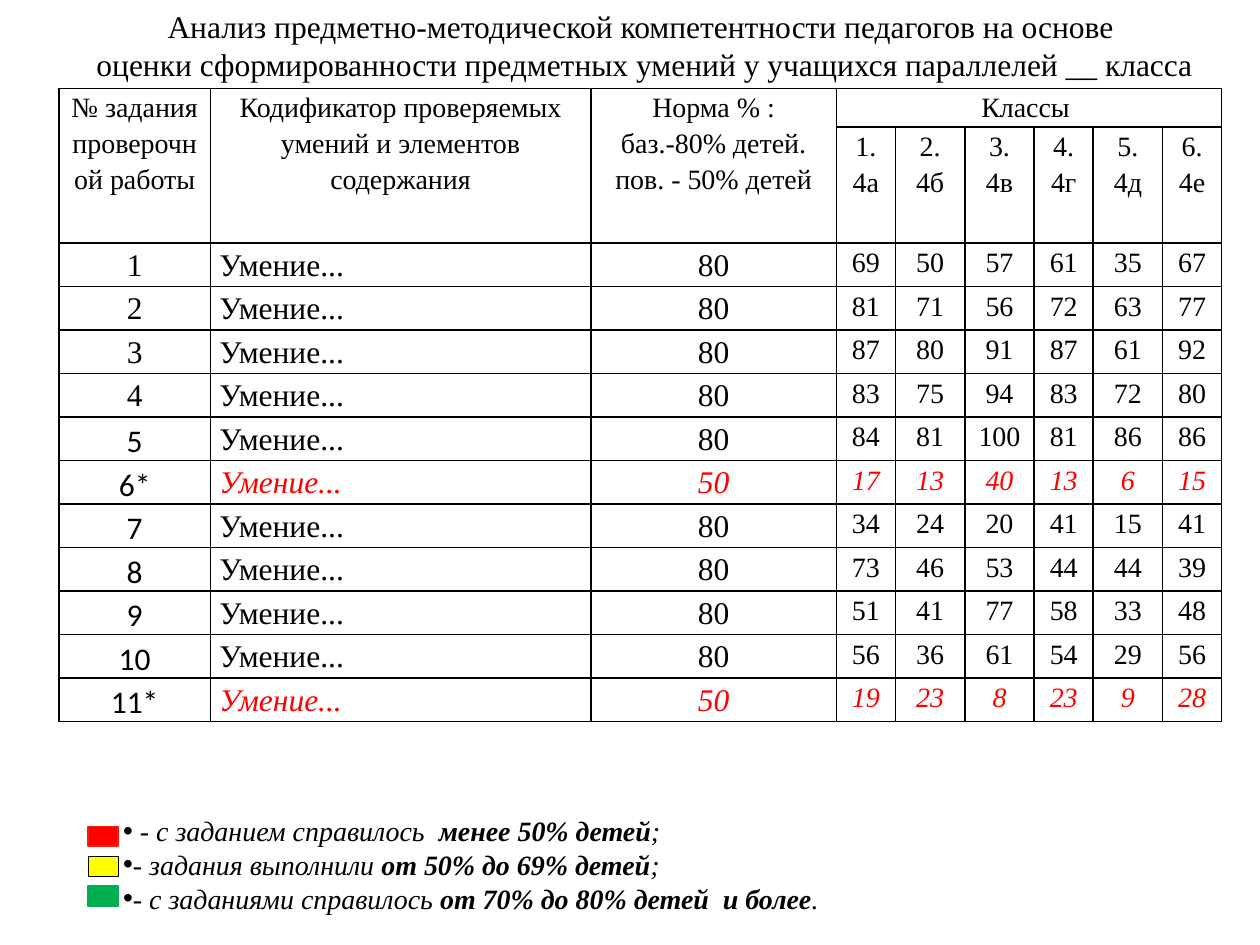
from lxml import etree
from pptx import Presentation
from pptx.dml.color import RGBColor
from pptx.enum.shapes import MSO_SHAPE
from pptx.enum.text import MSO_ANCHOR, MSO_AUTO_SIZE, PP_ALIGN
from pptx.oxml.ns import qn
from pptx.util import Cm, Pt

CENTER, LEFT = PP_ALIGN.CENTER, PP_ALIGN.LEFT
TOP, MIDDLE = MSO_ANCHOR.TOP, MSO_ANCHOR.MIDDLE
FIT = MSO_AUTO_SIZE.SHAPE_TO_FIT_TEXT
RECT = MSO_SHAPE.RECTANGLE
SERIF, SANS = "Times New Roman", "Calibri"
COLORS = {"black": "000000", "red": "FF0000", "red_line": "FD1E07",
          "yellow": "FFFF00", "green": "00B050"}


def add_run(p, text, size, font=SERIF, color="black", bold=False, italic=False):
    r = p.add_run()
    r.text = text
    r.font.size, r.font.name = Pt(size), font
    r.font.bold, r.font.italic = bold, italic
    r.font.color.rgb = RGBColor.from_string(COLORS[color])


def fill_cell(cell, lines, size, align=CENTER, **style):
    tf = cell.text_frame
    for i, line in enumerate(lines):
        p = tf.add_paragraph() if i else tf.paragraphs[0]
        p.alignment, p.line_spacing = align, 1.15
        add_run(p, line, size, **style)


prs = Presentation()
prs.slide_width, prs.slide_height = Cm(25.4), Cm(19.05)
slide = prs.slides.add_slide(prs.slide_layouts[1])

# Title
sp = slide.shapes.title
sp.left, sp.top, sp.width, sp.height = Cm(1.19), Cm(0), Cm(23.62), Cm(1.8)
tf = sp.text_frame
tf.word_wrap, tf.auto_size, tf.vertical_anchor = False, FIT, MIDDLE
title = ["Анализ предметно-методической компетентности педагогов на основе ",
         "оценки сформированности предметных умений у учащихся параллелей __ класса"]
for i, line in enumerate(title):
    p = tf.add_paragraph() if i else tf.paragraphs[0]
    p.alignment = CENTER
    add_run(p, line, 18)

# Table grid
col_widths = [3.05, 7.67, 4.95, 1.19, 1.4, 1.4, 1.19, 1.4, 1.19]
row_heights = [0.78, 2.34] + [0.877] * 11
table = slide.shapes.add_table(
    len(row_heights), len(col_widths), Cm(1.19), Cm(1.78),
    Cm(sum(col_widths)), Cm(sum(row_heights))).table
table.first_row = table.horz_banding = False
for col, width in zip(table.columns, col_widths):
    col.width = Cm(width)
for row, height in zip(table.rows, row_heights):
    row.height = Cm(height)

# Cell margins, borders and fill
for cell in table.iter_cells():
    cell.margin_left = cell.margin_right = Cm(0.18)
    cell.margin_top = cell.margin_bottom = 0
    cell.vertical_anchor = TOP
    tcPr = cell._tc.get_or_add_tcPr()
    for side in ("a:lnL", "a:lnR", "a:lnT", "a:lnB"):
        ln = etree.SubElement(tcPr, qn(side), w=str(Pt(1)))
        solid = etree.SubElement(ln, qn("a:solidFill"))
        etree.SubElement(solid, qn("a:srgbClr"), val=COLORS["black"])
    cell.fill.background()

# Table header
headers = [["№ задания проверочной работы"],
           ["Кодификатор проверяемых умений и элементов содержания"],
           ["Норма % :", "баз.-80% детей.", "пов. - 50% детей"]]
for c, lines in enumerate(headers):
    table.cell(0, c).merge(table.cell(1, c))
    fill_cell(table.cell(0, c), lines, 16)
table.cell(0, 3).merge(table.cell(0, 8))
fill_cell(table.cell(0, 3), ["Классы "], 16)
for i, letter in enumerate("абвгде"):
    fill_cell(table.cell(1, 3 + i), [f"{i + 1}.", f"4{letter}"], 16)

# Results by task; advanced tasks carry an asterisk
results = [
    ("1", [69, 50, 57, 61, 35, 67]),
    ("2", [81, 71, 56, 72, 63, 77]),
    ("3", [87, 80, 91, 87, 61, 92]),
    ("4", [83, 75, 94, 83, 72, 80]),
    ("5", [84, 81, 100, 81, 86, 86]),
    ("6*", [17, 13, 40, 13, 6, 15]),
    ("7", [34, 24, 20, 41, 15, 41]),
    ("8", [73, 46, 53, 44, 44, 39]),
    ("9", [51, 41, 77, 58, 33, 48]),
    ("10", [56, 36, 61, 54, 29, 56]),
    ("11*", [19, 23, 8, 23, 9, 28]),
]
for i, (task, scores) in enumerate(results):
    row = 2 + i
    advanced = task.endswith("*")
    style = {"color": "red" if advanced else "black", "italic": advanced}
    fill_cell(table.cell(row, 0), [task], 18, font=SERIF if i < 4 else SANS)
    fill_cell(table.cell(row, 1), ["Умение..."], 18, LEFT, **style)
    fill_cell(table.cell(row, 2), ["50" if advanced else "80"], 18, **style)
    for c, score in enumerate(scores, 3):
        fill_cell(table.cell(row, c), [str(score)], 16, **style)

# Legend text
sp = slide.placeholders[1]
sp.left, sp.top, sp.width, sp.height = Cm(0.99), Cm(16.28), Cm(24.41), Cm(2.31)
tf = sp.text_frame
tf.word_wrap, tf.auto_size, tf.vertical_anchor = True, FIT, TOP
legend = [(" - с заданием справилось  ", "менее 50% детей", ";"),
          ("- задания выполнили ", "от 50% до 69% детей", ";"),
          ("- с заданиями справилось ", "от 70% до 80% детей  и более", ".")]
for i, parts in enumerate(legend):
    p = tf.add_paragraph() if i else tf.paragraphs[0]
    p.alignment = LEFT
    p.space_before = p.space_after = Pt(0)
    pPr = p._p.get_or_add_pPr()
    pPr.set("marL", "0")
    pPr.set("indent", str(Cm(1.24)))
    etree.SubElement(pPr, qn("a:buFont"), typeface="Arial")
    etree.SubElement(pPr, qn("a:buChar"), char="•")
    for text, bold in zip(parts, (False, True, False)):
        add_run(p, text, 16, bold=bold, italic=True)

# Legend swatches
swatches = [("red", "red_line", 1), ("yellow", "black", 0.25), ("green", "green", 1)]
for i, (fill, line, width) in enumerate(swatches):
    sp = slide.shapes.add_shape(RECT, Cm(1.78), Cm(16.66 + 0.6 * i), Cm(0.6), Cm(0.4))
    sp.shadow.inherit = False
    sp.fill.solid()
    sp.fill.fore_color.rgb = RGBColor.from_string(COLORS[fill])
    sp.line.color.rgb = RGBColor.from_string(COLORS[line])
    sp.line.width = Pt(width)

prs.save("out.pptx")
